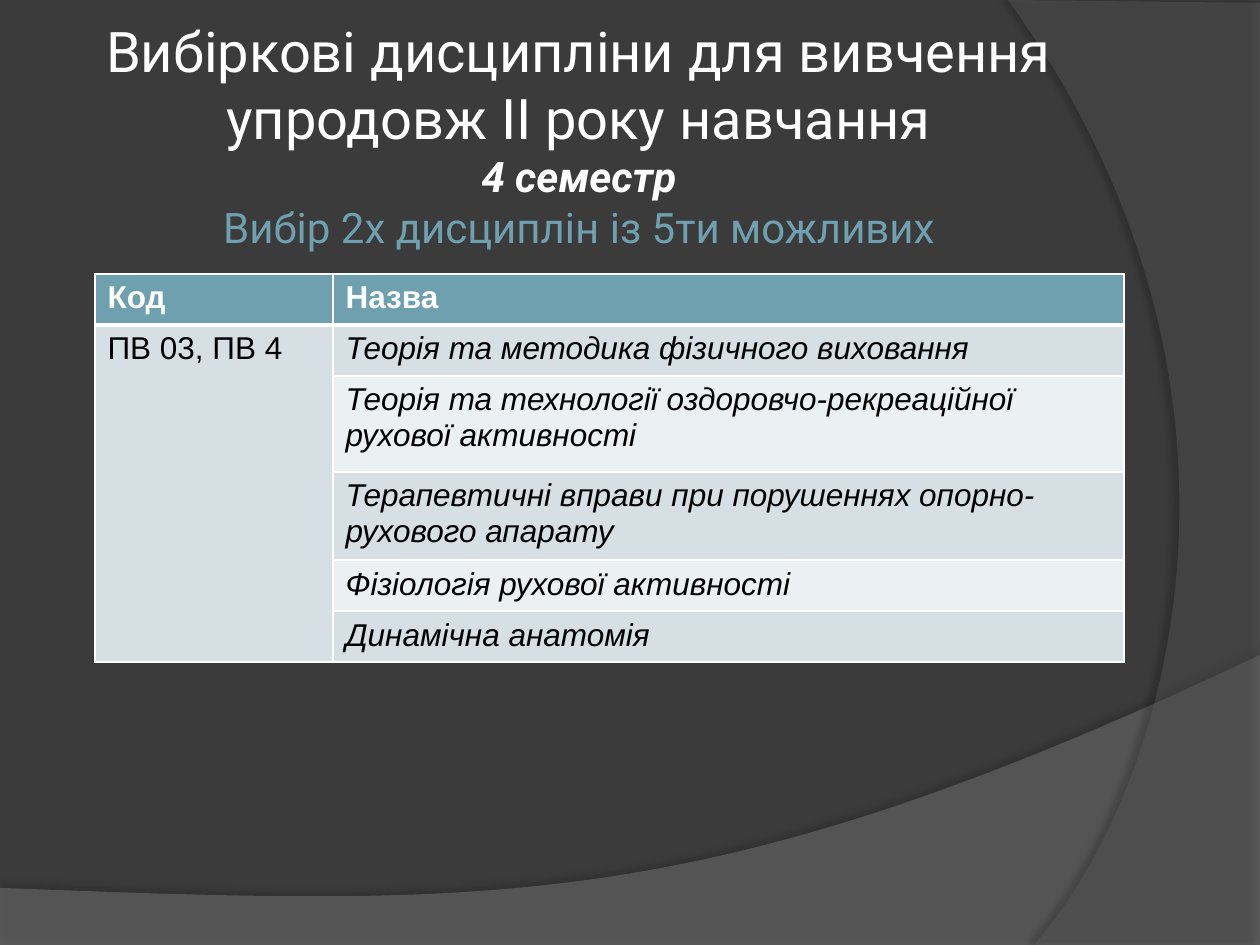
from dataclasses import dataclass

from lxml.etree import SubElement
from pptx import Presentation
from pptx.dml.color import RGBColor
from pptx.enum.text import MSO_ANCHOR, PP_ALIGN
from pptx.oxml import parse_xml
from pptx.oxml.ns import nsdecls, qn
from pptx.util import Emu, Pt

SCALE = 914400 / 126
COLORS = {
    "background": "3B3B3B",
    "wave": "7F7F7F",
    "arc": "5E5E5E",
    "shadow": "000000",
    "white": "FFFFFF",
    "black": "000000",
    "accent": "6EA0B0",
    "band_dark": "D5DFE4",
    "band_light": "EBF0F2",
}


@dataclass
class Swoosh:
    corners: list[tuple[int, int]]
    curve: list[tuple[int, int]]
    color: str
    alpha: int
    shadow_alpha: int
    shadow_distance: float
    shadow_angle: int


@dataclass
class Course:
    name: str
    height: int


SWOOSHES = [
    Swoosh([(0, 888), (0, 945), (1260, 945)],
           [(1260, 655), (704, 919), (493, 906), (0, 888)],
           "wave", 45, 35, 3.5, 270),
    Swoosh([(1260, 3), (1260, 945)],
           [(1034, 945), (1178, 780), (1283, 378), (1008, 0)],
           "arc", 40, 45, 4, 180),
]
COURSES = [
    Course("Теорія та методика фізичного виховання", 51),
    Course("Теорія та технології оздоровчо-рекреаційної рухової активності", 96),
    Course("Терапевтичні вправи при порушеннях опорно-рухового апарату", 83),
    Course("Фізіологія рухової активності", 51),
    Course("Динамічна анатомія", 51),
]


def px(n: float) -> Emu:
    return Emu(round(n * SCALE))


def rgb(name: str) -> RGBColor:
    return RGBColor.from_string(COLORS[name])


def add_text(p, text: str, *, font="Arial", size=18, color="black", bold=False, italic=False):
    r = p.add_run()
    r.text = text
    r.font.name = font
    r.font.size = Pt(size)
    r.font.bold = bold
    r.font.italic = italic
    r.font.color.rgb = rgb(color)


def bezier(points: list[tuple[int, int]], steps: int = 60) -> list[tuple[float, float]]:
    def at(t: float) -> tuple[float, float]:
        u = 1 - t
        weights = (u ** 3, 3 * u * u * t, 3 * u * t * t, t ** 3)
        return (sum(w * x for w, (x, _) in zip(weights, points)),
                sum(w * y for w, (_, y) in zip(weights, points)))
    return [at(i / steps) for i in range(steps + 1)]


def draw_swoosh(s, swoosh: Swoosh) -> None:
    first, *rest = [(px(x), px(y)) for x, y in swoosh.corners + bezier(swoosh.curve)]
    builder = s.shapes.build_freeform(*first)
    builder.add_line_segments(rest, close=True)
    sp = builder.convert_to_shape()
    sp.fill.solid()
    sp.fill.fore_color.rgb = rgb(swoosh.color)
    sp.line.fill.background()
    sp.shadow.inherit = False
    fill_color = sp._element.spPr.find(qn("a:solidFill")).find(qn("a:srgbClr"))
    SubElement(fill_color, qn("a:alpha"), val=str(swoosh.alpha * 1000))
    effects = sp._element.spPr.find(qn("a:effectLst"))
    shadow = SubElement(effects, qn("a:outerShdw"), blurRad=str(Pt(4)),
                        dist=str(Pt(swoosh.shadow_distance)),
                        dir=str(swoosh.shadow_angle * 60000), rotWithShape="0")
    shadow_color = SubElement(shadow, qn("a:srgbClr"), val=COLORS["shadow"])
    SubElement(shadow_color, qn("a:alpha"), val=str(swoosh.shadow_alpha * 1000))


def draw_title(s) -> None:
    sp = s.shapes.add_textbox(px(64), px(55), px(1030), px(158))
    tf = sp.text_frame
    tf.word_wrap = True
    tf.vertical_anchor = MSO_ANCHOR.MIDDLE
    tf.margin_left = tf.margin_right = tf.margin_top = tf.margin_bottom = Pt(3.6)
    p = tf.paragraphs[0]
    p.alignment = PP_ALIGN.CENTER
    add_text(p, "Вибіркові дисципліни для вивчення упродовж ІІ року навчання",
             font="Roboto", size=32, color="white")
    p.add_line_break()
    add_text(p, "4 семестр", font="Roboto", size=24, color="white", bold=True, italic=True)
    p.add_line_break()
    add_text(p, "Вибір 2х дисциплін із 5ти можливих", font="Roboto", size=24, color="accent")


def style_cell(cell, fill: str, bottom: int = 1, top: int = 1) -> None:
    cell.fill.solid()
    cell.fill.fore_color.rgb = rgb(fill)
    tcPr = cell._tc.get_or_add_tcPr()
    for i, (side, width) in enumerate((("L", 1), ("R", 1), ("T", top), ("B", bottom))):
        tcPr.insert(i, parse_xml(
            f'<a:ln{side} {nsdecls("a")} w="{Pt(width)}"><a:solidFill>'
            f'<a:srgbClr val="{COLORS["white"]}"/></a:solidFill></a:ln{side}>'))


def draw_table(s) -> None:
    heights = [51] + [course.height for course in COURSES]
    table = s.shapes.add_table(len(heights), 2, px(95), px(274), px(1029), px(sum(heights))).table
    for column, width in zip(table.columns, (238, 791)):
        column.width = px(width)
    for row, height in zip(table.rows, heights):
        row.height = px(height)
    for col, heading in enumerate(("Код", "Назва")):
        cell = table.cell(0, col)
        style_cell(cell, "accent", bottom=3)
        add_text(cell.text_frame.paragraphs[0], heading, color="white", bold=True)
    for row, course in enumerate(COURSES, 1):
        top = 3 if row == 1 else 1
        style_cell(table.cell(row, 0), "band_dark", top=top)
        cell = table.cell(row, 1)
        style_cell(cell, "band_dark" if row % 2 else "band_light", top=top)
        add_text(cell.text_frame.paragraphs[0], course.name, italic=True)
    code = table.cell(1, 0)
    code.merge(table.cell(len(COURSES), 0))
    add_text(code.text_frame.paragraphs[0], "ПВ 03, ПВ 4")


def main() -> None:
    prs = Presentation()
    prs.slide_width, prs.slide_height = px(1260), px(945)
    s = prs.slides.add_slide(prs.slide_layouts[6])
    s.background.fill.solid()
    s.background.fill.fore_color.rgb = rgb("background")
    for swoosh in SWOOSHES:
        draw_swoosh(s, swoosh)
    draw_title(s)
    draw_table(s)
    prs.save("out.pptx")


if __name__ == "__main__":
    main()
